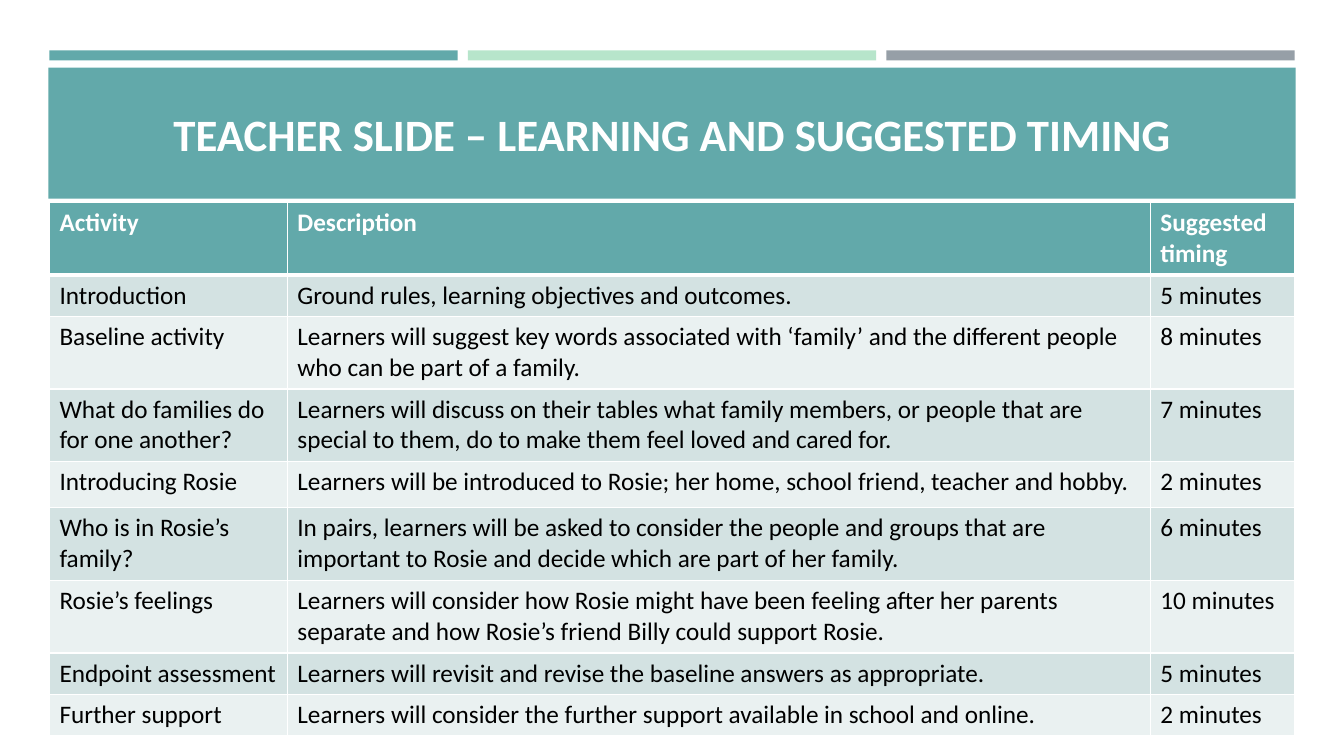
import pptx
import pptx.util
import pptx.dml.color
import pptx.enum.shapes
import pptx.enum.text
import pptx.oxml
import pptx.oxml.ns

WIDTH, HEIGHT = 13.33, 7.5
LEFT = 0.49
BAR_WIDTH, BAR_GAP = 4.05, 0.1
FONT = "Calibri"
COLORS = {
    "teal": "62A9AA",
    "mint": "B7E5CB",
    "grey": "969FA7",
    "band_dark": "D3E2E2",
    "band_light": "EAF1F1",
    "white": "FFFFFF",
    "black": "000000",
}
COLUMN_WIDTHS = [2.36, 8.56, 1.43]
ONE_LINE, TWO_LINES = 0.41, 0.72
HEADER = ("Activity", "Description", "Suggested timing")
LESSON = [
    (ONE_LINE, "Introduction", "Ground rules, learning objectives and outcomes.", "5 minutes"),
    (TWO_LINES, "Baseline activity",
     "Learners will suggest key words associated with ‘family’ and the different people "
     "who can be part of a family.", "8 minutes"),
    (TWO_LINES, "What do families do for one another?",
     "Learners will discuss on their tables what family members, or people that are "
     "special to them, do to make them feel loved and cared for.", "7 minutes"),
    (0.46, "Introducing Rosie",
     "Learners will be introduced to Rosie; her home, school friend, teacher and hobby.",
     "2 minutes"),
    (TWO_LINES, "Who is in Rosie’s family?",
     "In pairs, learners will be asked to consider the people and groups that are "
     "important to Rosie and decide which are part of her family.", "6 minutes"),
    (TWO_LINES, "Rosie’s feelings",
     "Learners will consider how Rosie might have been feeling after her parents "
     "separate and how Rosie’s friend Billy could support Rosie.", "10 minutes"),
    (ONE_LINE, "Endpoint assessment",
     "Learners will revisit and revise the baseline answers as appropriate.", "5 minutes"),
    (ONE_LINE, "Further support",
     "Learners will consider the further support available in school and online.",
     "2 minutes"),
]


def inches(*lengths):
    return [pptx.util.Inches(length) for length in lengths]


def color(name):
    return pptx.dml.color.RGBColor.from_string(COLORS[name])


def add_block(page, left, top, width, height, fill):
    block = page.shapes.add_shape(
        pptx.enum.shapes.MSO_SHAPE.RECTANGLE, *inches(left, top, width, height))
    block.shadow.inherit = False
    block.fill.solid()
    block.fill.fore_color.rgb = color(fill)
    block.line.fill.background()


def write(frame, text, size, ink, bold):
    span = frame.paragraphs[0].add_run()
    span.text = text
    span.font.name = FONT
    span.font.size = pptx.util.Pt(size)
    span.font.bold = bold
    span.font.color.rgb = color(ink)


def place_title(page, text):
    title = page.shapes.title
    title.left, title.top, title.width, title.height = inches(0.64, 0.77, 12.06, 1.11)
    title.element.getparent().append(title.element)
    frame = title.text_frame
    frame.word_wrap = True
    frame.vertical_anchor = pptx.enum.text.MSO_ANCHOR.MIDDLE
    frame.paragraphs[0].alignment = pptx.enum.text.PP_ALIGN.CENTER
    write(frame, text, 32, "white", True)


def set_borders(cell, top, bottom):
    properties = cell._tc.get_or_add_tcPr()
    sides = {"lnL": 1, "lnR": 1, "lnT": top, "lnB": bottom}
    for position, (side, points) in enumerate(sides.items()):
        border = pptx.oxml.parse_xml(
            f'<a:{side} {pptx.oxml.ns.nsdecls("a")} w="{pptx.util.Pt(points)}">'
            f'<a:solidFill><a:srgbClr val="{COLORS["white"]}"/></a:solidFill></a:{side}>')
        properties.insert(position, border)


def fill_row(table, row, height, texts, fill, ink, bold, top=1, bottom=1):
    table.rows[row].height = pptx.util.Inches(height)
    for column, text in enumerate(texts):
        cell = table.cell(row, column)
        cell.fill.solid()
        cell.fill.fore_color.rgb = color(fill)
        set_borders(cell, top, bottom)
        write(cell.text_frame, text, 18, ink, bold)


def add_timetable(page):
    height = TWO_LINES + sum(line[0] for line in LESSON)
    table = page.shapes.add_table(
        len(LESSON) + 1, len(HEADER),
        *inches(LEFT, 2.01, sum(COLUMN_WIDTHS), height)).table
    table.horz_banding = False
    for column, width in zip(table.columns, COLUMN_WIDTHS):
        column.width = pptx.util.Inches(width)
    fill_row(table, 0, TWO_LINES, HEADER, "teal", "white", True, bottom=3)
    for row, (row_height, *texts) in enumerate(LESSON, start=1):
        band = "band_dark" if row % 2 else "band_light"
        fill_row(table, row, row_height, texts, band, "black", False,
                 top=3 if row == 1 else 1)


def main():
    deck = pptx.Presentation()
    deck.slide_width, deck.slide_height = inches(WIDTH, HEIGHT)
    page = deck.slides.add_slide(deck.slide_layouts.get_by_name("Title Only"))
    for index, fill in enumerate(("teal", "mint", "grey")):
        add_block(page, LEFT + index * (BAR_WIDTH + BAR_GAP), 0.5, BAR_WIDTH, 0.1, fill)
    add_block(page, 0.48, 0.67, 12.37, 1.3, "teal")
    place_title(page, "TEACHER SLIDE – LEARNING AND SUGGESTED TIMING")
    add_timetable(page)
    deck.save("out.pptx")


if __name__ == "__main__":
    main()
